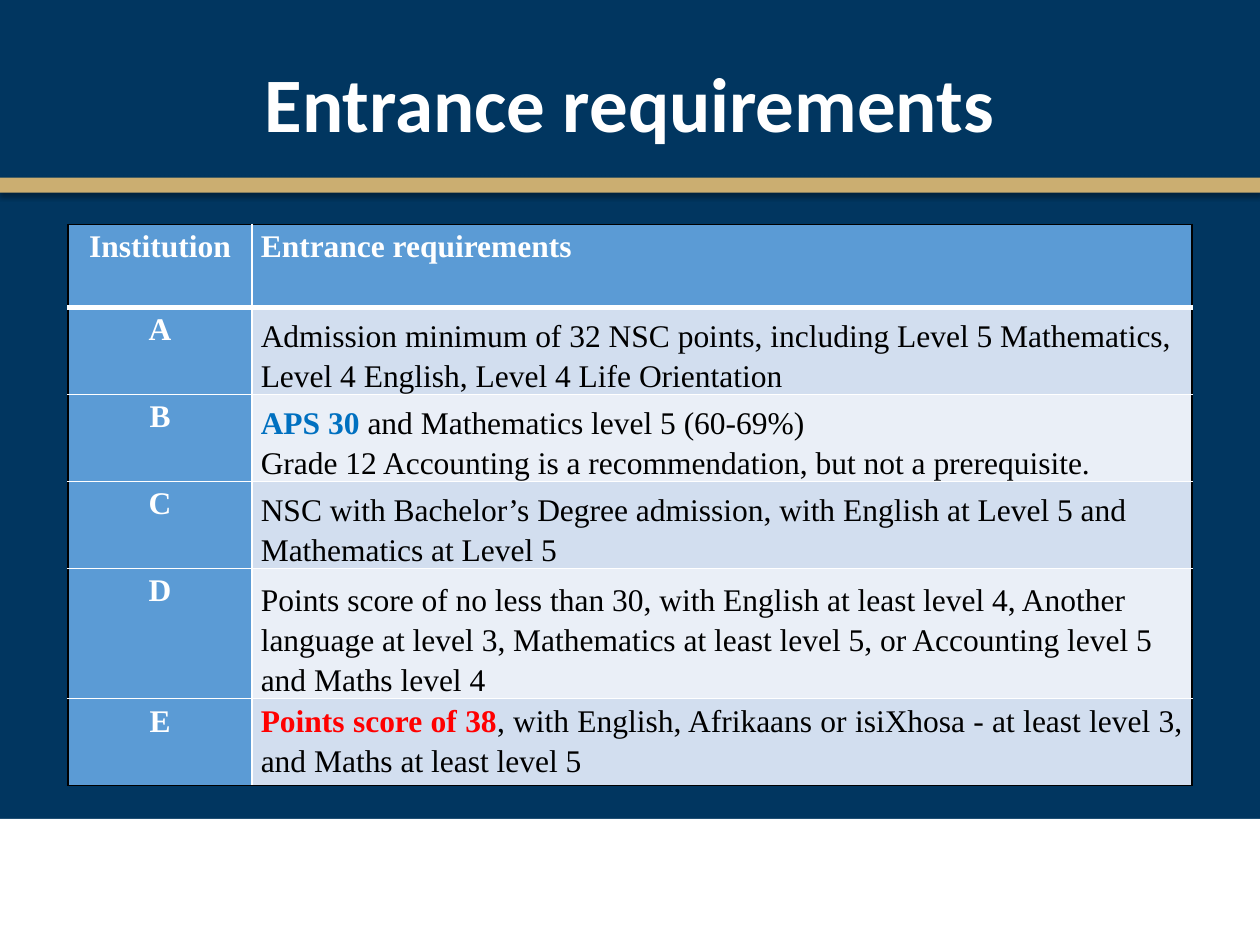
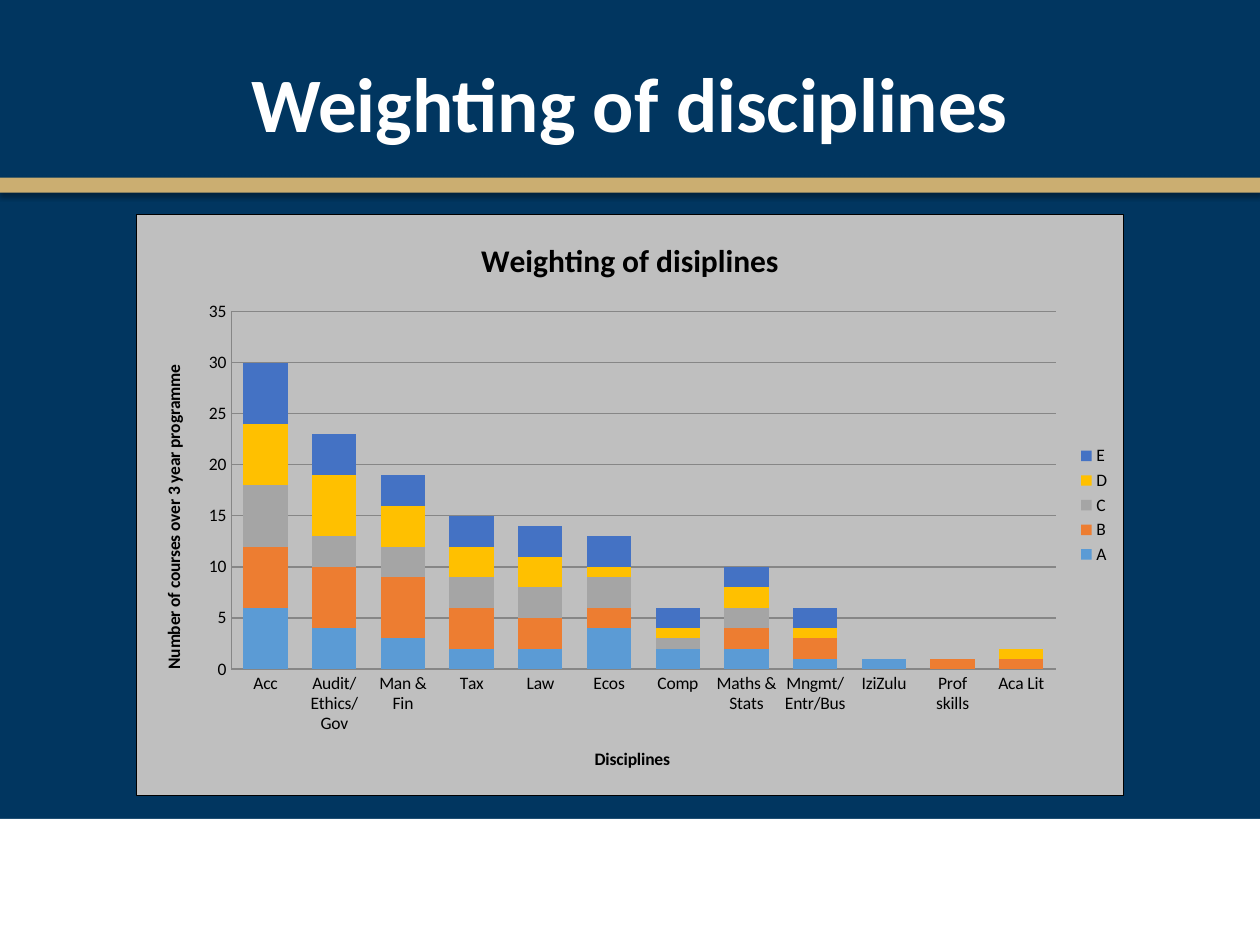
import pptx
import pptx.util
import pptx.dml.color
import pptx.chart.data
import pptx.enum.chart
import pptx.enum.shapes
import pptx.enum.text
import pptx.oxml
import pptx.oxml.ns
import lxml.etree
from dataclasses import dataclass

Inches, Pt = pptx.util.Inches, pptx.util.Pt
ALIGN = pptx.enum.text.PP_ALIGN
ANCHOR = pptx.enum.text.MSO_ANCHOR
RECT = pptx.enum.shapes.MSO_SHAPE.RECTANGLE
XL = pptx.enum.chart
qn = pptx.oxml.ns.qn


@dataclass(frozen=True)
class Theme:
    navy: str = "013660"
    gold: str = "CBAE71"
    white: str = "FFFFFF"
    black: str = "000000"
    blue: str = "0070C0"
    red: str = "FF0000"
    head: str = "5B9BD5"
    bands: tuple = ("D2DEEF", "EAEFF7")
    panel: str = "BFBFBF"
    grid: str = "868686"
    series: tuple = ("5B9BD5", "ED7D31", "A5A5A5", "FFC000", "4472C4")
    sans: str = "Calibri"
    serif: str = "Times New Roman"
    title: int = 44
    table: int = 18
    chart_title: int = 18
    chart: int = 10


T = Theme()

# Each row: institution, then paragraphs of (text, accent colour) runs
REQUIREMENTS = [
    ("A", [[("Admission minimum of 32 NSC points, including Level 5 Mathematics, "
             "Level 4 English, Level 4 Life Orientation", None)]]),
    ("B", [[("APS 30 ", T.blue), ("and Mathematics level 5 (60-69%)", None)],
           [("Grade 12 Accounting is a recommendation, but not a prerequisite.", None)]]),
    ("C", [[("NSC with Bachelor’s Degree admission, with English at Level 5 and "
             "Mathematics at Level 5", None)]]),
    ("D", [[("Points score of no less than 30, with English at least level 4, Another "
             "language at level 3, Mathematics at least level 5, or Accounting level 5 "
             "and Maths level 4", None)]]),
    ("E", [[("Points score of 38", T.red),
            (", with English, Afrikaans or isiXhosa - at least level 3, "
             "and Maths at least level 5", None)]]),
]

DISCIPLINES = ["Acc", "Audit/Ethics/Gov", "Man & Fin", "Tax", "Law", "Ecos", "Comp",
               "Maths & Stats", "Mngmt/Entr/Bus", "IziZulu", "Prof skills", "Aca Lit"]
COURSES = {
    "A": [6, 4, 3, 2, 2, 4, 2, 2, 1, 1, None, None],
    "B": [6, 6, 6, 4, 3, 2, None, 2, 2, None, 1, 1],
    "C": [6, 3, 3, 3, 3, 3, 1, 2, None, None, None, None],
    "D": [6, 6, 4, 3, 3, 1, 1, 2, 1, None, None, 1],
    "E": [6, 4, 3, 3, 3, 3, 2, 2, 2, None, None, None],
}


def rgb(value):
    return pptx.dml.color.RGBColor.from_string(value)


def box_of(*lengths):
    return [Inches(v) for v in lengths]


def style_font(font, color, **formats):
    for name, value in formats.items():
        setattr(font, name, value)
    font.color.rgb = rgb(color)


def paint(fill, color):
    fill.solid()
    fill.fore_color.rgb = rgb(color)


def add_bar(s, box, color):
    sp = s.shapes.add_shape(RECT, *box_of(*box))
    sp.shadow.inherit = False
    paint(sp.fill, color)
    sp.line.fill.background()
    return sp


def add_shadow(sp):
    effects = sp._element.spPr.find(qn("a:effectLst"))
    shadow = lxml.etree.SubElement(effects, qn("a:outerShdw"), blurRad=str(Pt(3.1)),
                                   dist=str(Pt(1.8)), dir="5400000", rotWithShape="0")
    color = lxml.etree.SubElement(shadow, qn("a:srgbClr"), val=T.black)
    lxml.etree.SubElement(color, qn("a:alpha"), val="35000")


def add_base(prs, title):
    """Slide with the shared background, footer, gold band and title."""
    s = prs.slides.add_slide(prs.slide_layouts[6])
    paint(s.background.fill, T.navy)
    add_bar(s, (0, 6.5, 10, 1), T.white)
    add_shadow(add_bar(s, (0, 1.41, 10, 0.12), T.gold))

    tf = s.shapes.add_textbox(*box_of(0.69, 0.4, 8.62, 0.91)).text_frame
    tf.word_wrap = True
    tf.vertical_anchor = ANCHOR.MIDDLE
    p = tf.paragraphs[0]
    p.alignment, p.line_spacing = ALIGN.CENTER, 0.9
    r = p.add_run()
    r.text = title
    style_font(r.font, T.white, name=T.sans, size=Pt(T.title), bold=True)
    return s


def set_borders(cell, borders):
    tcPr = cell._tc.get_or_add_tcPr()
    for side, (color, width) in zip("LRTB", borders):
        ln = lxml.etree.SubElement(tcPr, qn("a:ln" + side), w=str(Pt(width)))
        fill = lxml.etree.SubElement(ln, qn("a:solidFill"))
        lxml.etree.SubElement(fill, qn("a:srgbClr"), val=color)


def fill_cell(cell, paragraphs, align, anchor, color, bold, fill, borders):
    set_borders(cell, borders)
    paint(cell.fill, fill)
    cell.margin_left = cell.margin_right = Inches(0.07)
    cell.margin_top = cell.margin_bottom = 0
    cell.vertical_anchor = anchor
    tf = cell.text_frame
    for i, runs in enumerate(paragraphs):
        p = tf.add_paragraph() if i else tf.paragraphs[0]
        p.alignment, p.line_spacing = align, 1.15
        for text, accent in runs:
            r = p.add_run()
            r.text = text
            style_font(r.font, accent or color, name=T.serif, size=Pt(T.table),
                       bold=bold or accent is not None)


def add_requirements(s, left, top, widths, row_height):
    rows = [("Institution", [[("Entrance requirements", None)]])] + REQUIREMENTS
    last = len(rows) - 1
    table = s.shapes.add_table(len(rows), 2, *box_of(
        left, top, sum(widths), row_height * len(rows))).table
    for column, width in zip(table.columns, widths):
        column.width = Inches(width)

    outer, inner, heavy = (T.black, 1), (T.white, 1), (T.white, 3)
    for i, (name, paragraphs) in enumerate(rows):
        table.rows[i].height = Inches(row_height)
        header = i == 0
        above = outer if header else heavy if i == 1 else inner
        below = heavy if header else outer if i == last else inner
        # Institution column
        fill_cell(table.cell(i, 0), [[(name, None)]], ALIGN.CENTER, ANCHOR.TOP,
                  T.white, True, T.head, (outer, inner, above, below))
        # Requirement column: first and last rows are justified from the top
        edge = i in (0, last)
        fill_cell(table.cell(i, 1), paragraphs,
                  ALIGN.JUSTIFY if edge else ALIGN.LEFT,
                  ANCHOR.TOP if edge else ANCHOR.BOTTOM,
                  T.white if header else T.black, header,
                  T.head if header else T.bands[(i - 1) % 2],
                  (inner, outer, above, below))


def set_title(owner, text, size):
    tf = owner.text_frame
    tf.text = text
    style_font(tf.paragraphs[0].runs[0].font, T.black, name=T.sans,
               size=Pt(size), bold=True)


def frame_chart(chart):
    """Panel fill and outline of the whole chart area."""
    spPr = pptx.oxml.parse_xml(
        f'<c:spPr {pptx.oxml.ns.nsdecls("c", "a")}>'
        f'<a:solidFill><a:srgbClr val="{T.panel}"/></a:solidFill>'
        f'<a:ln w="{Pt(0.75)}"><a:solidFill><a:srgbClr val="{T.black}"/></a:solidFill></a:ln>'
        '</c:spPr>')
    chart._chartSpace.find(qn("c:chart")).addnext(spPr)


def add_weighting(s, box):
    data = pptx.chart.data.CategoryChartData()
    data.categories = DISCIPLINES
    for name, values in COURSES.items():
        data.add_series(name, values)
    chart = s.shapes.add_chart(XL.XL_CHART_TYPE.COLUMN_STACKED, *box_of(*box), data).chart
    style_font(chart.font, T.black, name=T.sans, size=Pt(T.chart))
    frame_chart(chart)
    chart.has_title = True
    set_title(chart.chart_title, "Weighting of disiplines", T.chart_title)
    chart.chart_title.include_in_layout = False

    # Columns
    plot = chart.plots[0]
    plot.gap_width, plot.overlap, plot.vary_by_categories = 55, 100, False
    for series, color in zip(plot.series, T.series):
        paint(series.format.fill, color)

    # Axes
    value_axis = chart.value_axis
    value_axis.has_major_gridlines = True
    value_axis.minimum_scale, value_axis.maximum_scale, value_axis.major_unit = 0, 35, 5
    titles = ((chart.category_axis, "Disciplines"),
              (value_axis, "Number of courses over 3 year programme"))
    for axis, text in titles:
        axis.major_tick_mark = axis.minor_tick_mark = XL.XL_TICK_MARK.NONE
        set_title(axis.axis_title, text, T.chart)
    for part in (chart.category_axis, value_axis, value_axis.major_gridlines):
        part.format.line.color.rgb = rgb(T.grid)
        part.format.line.width = Pt(0.75)

    # Legend
    chart.has_legend = True
    chart.legend.position = XL.XL_LEGEND_POSITION.RIGHT
    chart.legend.include_in_layout = False


def main():
    prs = pptx.Presentation()
    prs.slide_width, prs.slide_height = Inches(10), Inches(7.5)
    add_requirements(add_base(prs, "Entrance requirements"), 0.54, 1.78, (1.46, 7.46), 0.66)
    add_weighting(add_base(prs, "Weighting of disciplines"), (1.08, 1.7, 7.84, 4.62))
    prs.save("out.pptx")


if __name__ == "__main__":
    main()
